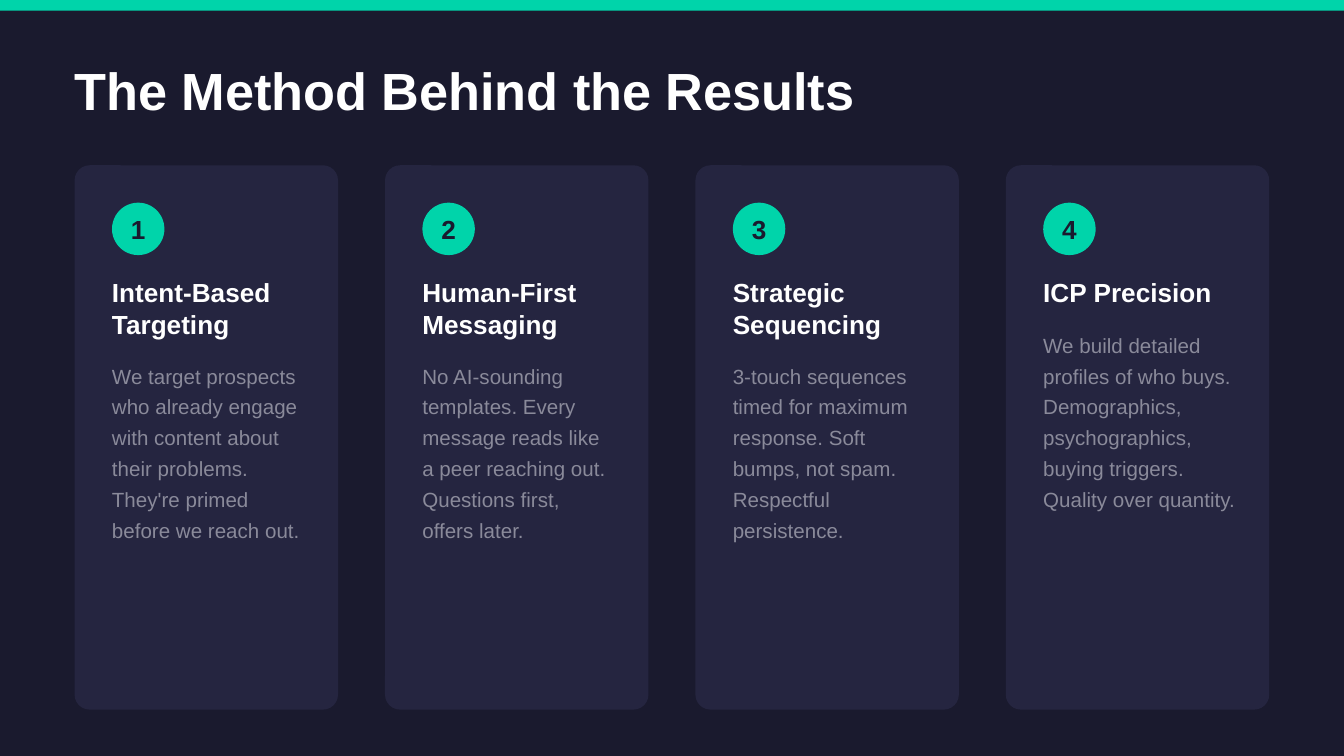
from pptx import Presentation
from pptx.dml.color import RGBColor
from pptx.enum.shapes import MSO_SHAPE
from pptx.enum.text import MSO_ANCHOR, PP_ALIGN
from pptx.util import Inches, Pt

# Content: heading, number of heading lines, body
TITLE = "The Method Behind the Results"
STEPS = [
    ("Intent-Based Targeting", 2,
     "We target prospects who already engage with content about their problems. "
     "They're primed before we reach out."),
    ("Human-First Messaging", 2,
     "No AI-sounding templates. Every message reads like a peer reaching out. "
     "Questions first, offers later."),
    ("Strategic Sequencing", 2,
     "3-touch sequences timed for maximum response. Soft bumps, not spam. "
     "Respectful persistence."),
    ("ICP Precision", 1,
     "We build detailed profiles of who buys. Demographics, psychographics, "
     "buying triggers. Quality over quantity."),
]

# Colours and text formats
NAVY, CARD, TEAL, WHITE, GREY = "1A1A2E", "252540", "00D4AA", "FFFFFF", "8A8A9A"
TITLE_FONT = {"size": Pt(28), "bold": True, "color": WHITE}
NUMBER_FONT = {"size": Pt(14), "bold": True, "color": NAVY}
HEADING_FONT = {"size": Pt(14), "bold": True, "color": WHITE}
BODY_FONT = {"size": Pt(11), "bold": False, "color": GREY}

# Layout in inches, on a 16:9 slide
WIDTH = 10
HEIGHT = WIDTH * 9 / 16
MARGIN = WIDTH / 18
PADDING = MARGIN / 2
CARD_TOP, CARD_WIDTH, CARD_HEIGHT = 1.23, 1.96, 4.05
CARD_STEP = (WIDTH - 2 * MARGIN - CARD_WIDTH) / (len(STEPS) - 1)
BADGE = 0.39
TEXT_WIDTH = 1.43
HEADING_TOP, HEADING_LINE, HEADING_GAP = 2.06, 0.23, 0.14
BODY_BOTTOM = 4.04


def colour(value):
    return RGBColor.from_string(value)


def write(shape, text, font, **paragraph_format):
    frame = shape.text_frame
    frame.word_wrap = True
    for side in ("left", "top", "right", "bottom"):
        setattr(frame, f"margin_{side}", 0)
    paragraph = frame.paragraphs[0]
    for name, value in paragraph_format.items():
        setattr(paragraph, name, value)
    run = paragraph.add_run()
    run.text = text
    run.font.name = "Arial"
    for name, value in font.items():
        if name == "color":
            run.font.color.rgb = colour(value)
        else:
            setattr(run.font, name, value)


def add_text(slide, box, text, font, **paragraph_format):
    shape = slide.shapes.add_textbox(*map(Inches, box))
    write(shape, text, font, **paragraph_format)


def add_block(slide, box, fill, kind=MSO_SHAPE.ROUNDED_RECTANGLE, rounding=None):
    shape = slide.shapes.add_shape(kind, *map(Inches, box))
    shape.shadow.inherit = False
    shape.fill.solid()
    shape.fill.fore_color.rgb = colour(fill)
    shape.line.fill.background()
    if rounding is not None:
        shape.adjustments[0] = rounding
    return shape


def add_step(slide, index, heading, lines, body):
    left = MARGIN + index * CARD_STEP
    inner = left + PADDING

    # Card and round number badge
    add_block(slide, (left, CARD_TOP, CARD_WIDTH, CARD_HEIGHT), CARD, rounding=0.057)
    badge = add_block(slide, (inner, CARD_TOP + PADDING, BADGE, BADGE), TEAL, rounding=0.5)
    write(badge, str(index + 1), NUMBER_FONT, alignment=PP_ALIGN.CENTER)
    badge.text_frame.vertical_anchor = MSO_ANCHOR.MIDDLE

    # Heading, with the body directly below it
    heading_height = lines * HEADING_LINE
    body_top = HEADING_TOP + heading_height + HEADING_GAP
    add_text(slide, (inner, HEADING_TOP, TEXT_WIDTH, heading_height),
             heading, HEADING_FONT, space_after=Pt(10))
    add_text(slide, (inner, body_top, TEXT_WIDTH, BODY_BOTTOM - body_top),
             body, BODY_FONT, line_spacing=Pt(16.5))


def main():
    presentation = Presentation()
    presentation.slide_width, presentation.slide_height = Inches(WIDTH), Inches(HEIGHT)
    slide = presentation.slides.add_slide(presentation.slide_layouts[6])
    slide.background.fill.solid()
    slide.background.fill.fore_color.rgb = colour(NAVY)

    # Top bar and title
    add_block(slide, (0, 0, WIDTH, 0.08), TEAL, MSO_SHAPE.RECTANGLE)
    add_text(slide, (MARGIN, 0.43, 9.07, 0.45), TITLE, TITLE_FONT)

    # One card for each step
    for index, step in enumerate(STEPS):
        add_step(slide, index, *step)

    presentation.save("out.pptx")


if __name__ == "__main__":
    main()
